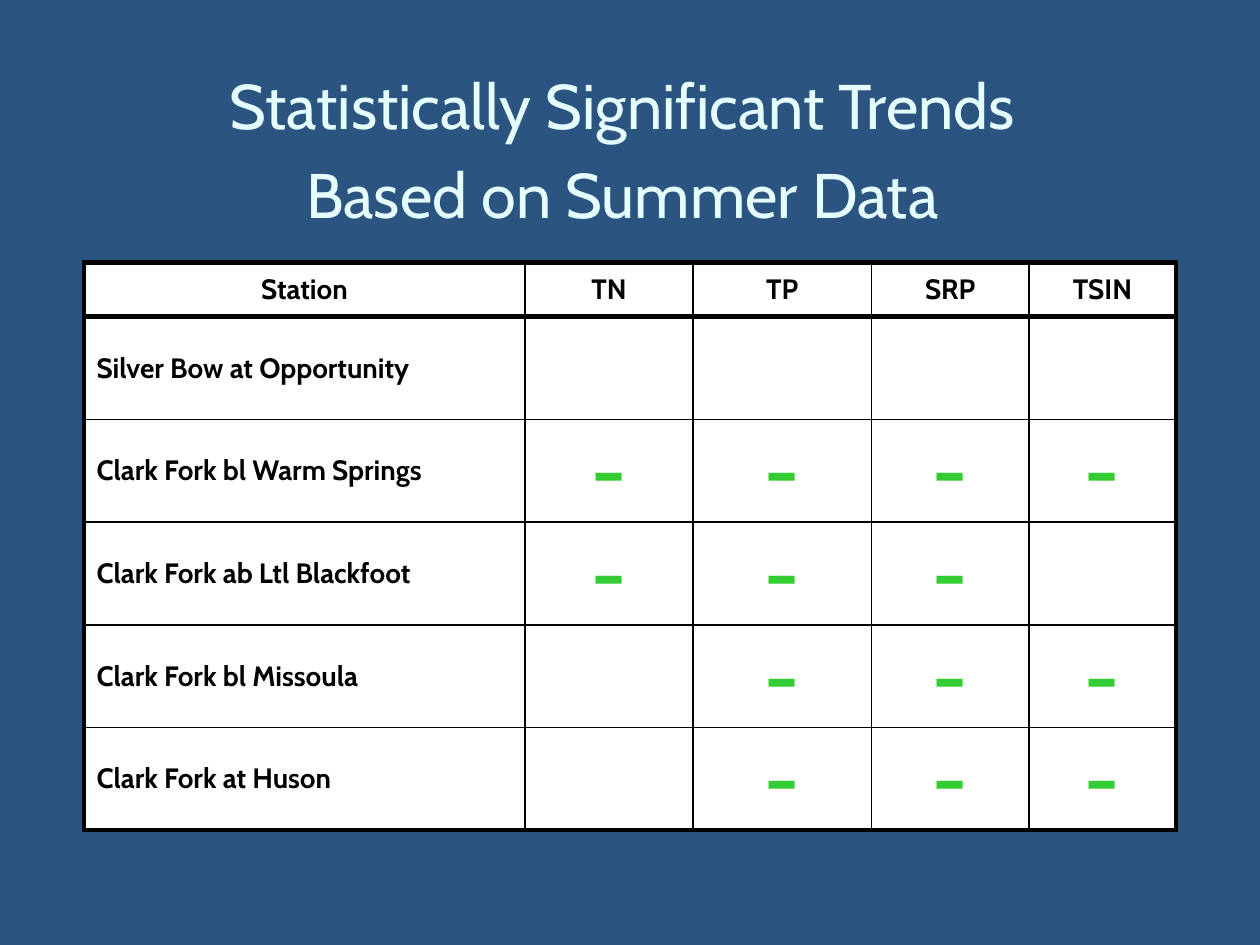
from pptx import Presentation
from pptx.dml.color import RGBColor
from pptx.enum.text import MSO_ANCHOR, MSO_AUTO_SIZE, PP_ALIGN
from pptx.oxml import parse_xml
from pptx.oxml.ns import nsdecls
from pptx.util import Pt

NAVY = RGBColor(0x2B, 0x54, 0x81)
ICE = RGBColor(0xE5, 0xFF, 0xFF)
BLACK = RGBColor(0, 0, 0)
WHITE = RGBColor(0xFF, 0xFF, 0xFF)
GREEN = RGBColor(0x33, 0xCC, 0x33)

TITLE = "Statistically Significant Trends\vBased on Summer Data"
ROWS = [
    ["Station", "TN", "TP", "SRP", "TSIN"],
    ["Silver Bow at Opportunity", "", "", "", ""],
    ["Clark Fork bl Warm Springs", "-", "-", "-", "-"],
    ["Clark Fork ab Ltl Blackfoot", "-", "-", "-", ""],
    ["Clark Fork bl Missoula", "", "-", "-", "-"],
    ["Clark Fork at Huson", "", "-", "-", "-"],
]
WIDTHS = [252, 96, 102, 90, 84]
HEAD, BODY = 31, 58.7
THIN, THICK = 1, 3
LABEL = {"name": "Cabin", "size": Pt(16), "bold": True}
MARK = {"name": "Cabin", "size": Pt(48), "bold": True}


def apply(item, values):
    """Set each named attribute of the item."""
    for name, value in values.items():
        setattr(item, name, value)


def set_font(para, values, color):
    """Format the font of a paragraph."""
    apply(para.font, values)
    para.font.color.rgb = color


def add_title(slide):
    """Place and format the slide title."""
    title = slide.shapes.title
    apply(title, {"left": Pt(36), "top": Pt(30), "width": Pt(648), "height": Pt(108)})
    frame = title.text_frame
    frame.text = TITLE
    apply(frame, {"auto_size": MSO_AUTO_SIZE.NONE, "word_wrap": True,
                  "vertical_anchor": MSO_ANCHOR.MIDDLE,
                  "margin_right": Pt(16), "margin_bottom": Pt(9)})
    para = frame.paragraphs[0]
    apply(para, {"alignment": PP_ALIGN.CENTER, "line_spacing": Pt(51)})
    set_font(para, {"name": "Cabin", "size": Pt(36), "bold": False}, ICE)


def add_edges(cell, widths):
    """Draw the four borders of a cell."""
    props = cell._tc.get_or_add_tcPr()
    for side, width in widths.items():
        props.append(parse_xml(
            f'<a:ln{side} {nsdecls("a")} w="{Pt(width)}"><a:solidFill>'
            f'<a:srgbClr val="{BLACK}"/></a:solidFill></a:ln{side}>'))


def fill_cell(cell, text, row, col):
    """Write and format one table cell."""
    add_edges(cell, {
        "L": THICK if col == 0 else THIN,
        "R": THICK if col == len(WIDTHS) - 1 else THIN,
        "T": THICK if row < 2 else THIN,
        "B": THICK if row in (0, len(ROWS) - 1) else THIN,
    })
    cell.fill.solid()
    cell.fill.fore_color.rgb = WHITE
    apply(cell, {"vertical_anchor": MSO_ANCHOR.MIDDLE, "margin_top": 0,
                 "margin_bottom": 0, "text": text})
    para = cell.text_frame.paragraphs[0]
    left = row > 0 and col == 0
    para.alignment = PP_ALIGN.LEFT if left else PP_ALIGN.CENTER
    if text == "-":
        set_font(para, MARK, GREEN)
    else:
        set_font(para, LABEL, BLACK)


def add_grid(slide):
    """Build the table of trends by station."""
    high = HEAD + BODY * (len(ROWS) - 1)
    table = slide.shapes.add_table(
        len(ROWS), len(WIDTHS), Pt(48), Pt(150), Pt(sum(WIDTHS)), Pt(high)).table
    apply(table, {"first_row": False, "horz_banding": False})
    for column, width in zip(table.columns, WIDTHS):
        column.width = Pt(width)
    for row, texts in enumerate(ROWS):
        table.rows[row].height = Pt(BODY if row else HEAD)
        for col, text in enumerate(texts):
            fill_cell(table.cell(row, col), text, row, col)


def main():
    """Build and save the slide."""
    deck = Presentation()
    apply(deck, {"slide_width": Pt(720), "slide_height": Pt(540)})
    slide = deck.slides.add_slide(deck.slide_layouts[5])
    back = slide.background.fill
    back.solid()
    back.fore_color.rgb = NAVY
    add_title(slide)
    add_grid(slide)
    deck.save("out.pptx")


if __name__ == "__main__":
    main()
